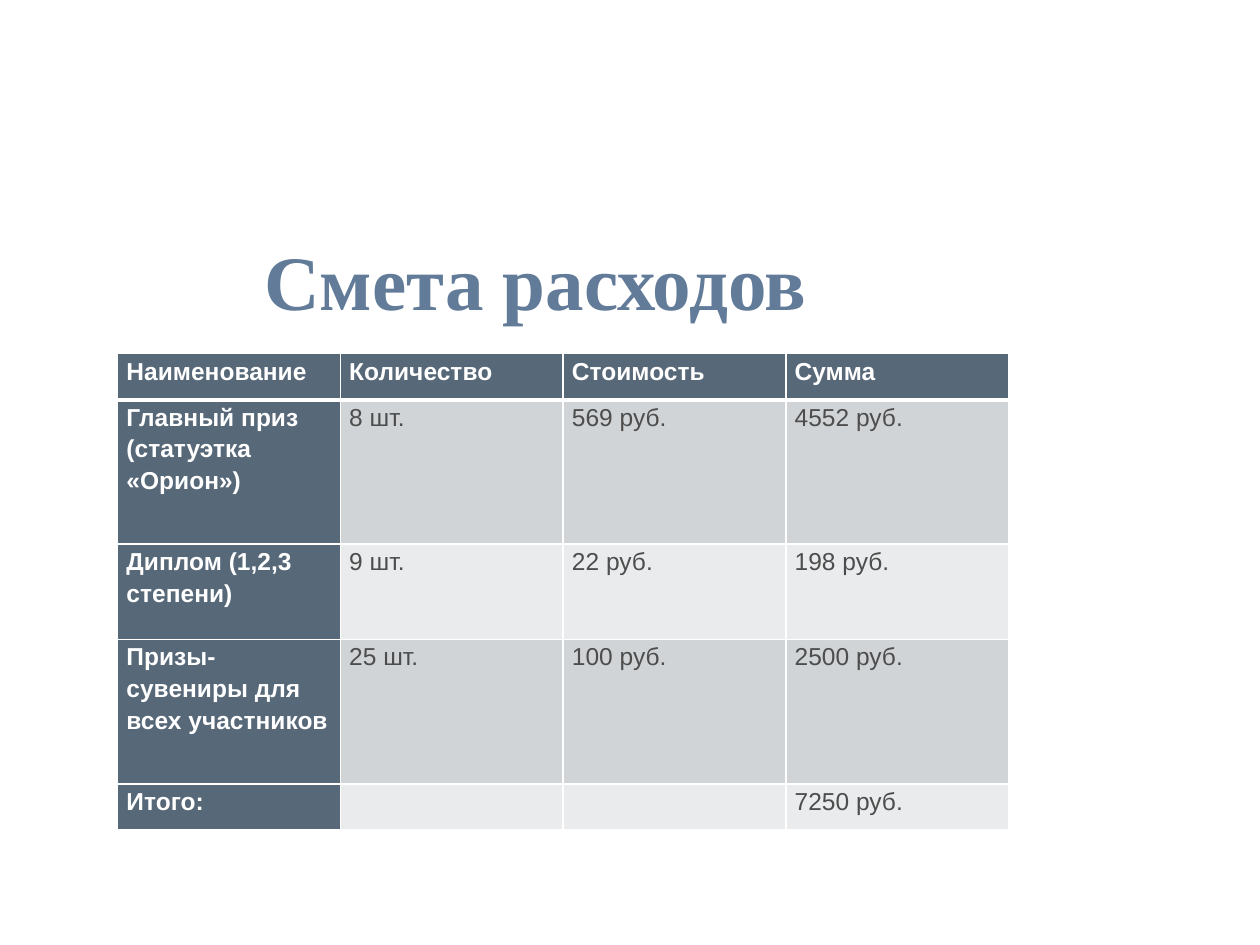
from dataclasses import dataclass

from lxml import etree
from pptx import Presentation
from pptx import util as u
from pptx.dml.color import RGBColor
from pptx.enum import text
from pptx.oxml import ns


@dataclass(frozen=True)
class Theme:
    title_color: str = "617B99"
    header_fill: str = "576878"
    header_text: str = "FFFFFF"
    body_text: str = "4D4D4D"
    band_fills: tuple = ("D1D4D6", "EAEBEC")
    border: str = "FFFFFF"
    title_font: str = "Times New Roman"
    body_font: str = "Arial"
    title_size: int = 44
    body_size: int = 14


def write_text(frame, content, *, font, size, color, bold=False,
               align=text.PP_ALIGN.LEFT, spacing=1.0):
    paragraph = frame.paragraphs[0]
    paragraph.alignment = align
    paragraph.line_spacing = spacing
    paragraph.font.size = u.Pt(size)
    if not content:
        return
    run = paragraph.add_run()
    run.text = content
    run.font.name = font
    run.font.size = u.Pt(size)
    run.font.bold = bold
    run.font.color.rgb = RGBColor.from_string(color)


class SlideBuilder:
    def __init__(self, slide, theme):
        self.slide = slide
        self.theme = theme

    def title(self, content, left, top, width, height):
        shape = self.slide.shapes.add_textbox(left, top, width, height)
        frame = shape.text_frame
        frame.word_wrap = True
        frame.vertical_anchor = text.MSO_ANCHOR.MIDDLE
        write_text(frame, content, font=self.theme.title_font,
                   size=self.theme.title_size, color=self.theme.title_color,
                   bold=True, align=text.PP_ALIGN.CENTER)

    def table(self, rows, left, top, width, row_heights):
        shape = self.slide.shapes.add_table(
            len(rows), len(rows[0]), left, top, width, sum(row_heights))
        table = shape.table
        for row, height in zip(table.rows, row_heights):
            row.height = height
        for row_index, row in enumerate(rows):
            for column_index, content in enumerate(row):
                self.cell(table.cell(row_index, column_index), content,
                          row_index, column_index)

    def cell(self, cell, content, row_index, column_index):
        theme = self.theme
        heading = row_index == 0 or column_index == 0
        band = theme.band_fills[(row_index - 1) % 2]
        cell.margin_left = cell.margin_right = u.Cm(0.18)
        cell.margin_top = cell.margin_bottom = 0
        cell.fill.solid()
        cell.fill.fore_color.rgb = RGBColor.from_string(
            theme.header_fill if heading else band)
        write_text(cell.text_frame, content, font=theme.body_font,
                   size=theme.body_size, bold=heading, spacing=1.15,
                   color=theme.header_text if heading else theme.body_text)
        self.borders(cell, top=3 if row_index == 1 else 1,
                     bottom=3 if row_index == 0 else 1)

    def borders(self, cell, top, bottom):
        properties = cell._tc.get_or_add_tcPr()
        widths = {"a:lnL": 1, "a:lnR": 1, "a:lnT": top, "a:lnB": bottom}
        for index, (tag, width) in enumerate(widths.items()):
            line = etree.Element(ns.qn(tag), w=str(u.Pt(width)))
            fill = etree.SubElement(line, ns.qn("a:solidFill"))
            etree.SubElement(fill, ns.qn("a:srgbClr"), val=self.theme.border)
            properties.insert(index, line)


def main():
    presentation = Presentation()
    presentation.slide_width = u.Cm(25.4)
    presentation.slide_height = u.Cm(19.05)
    slide = presentation.slides.add_slide(presentation.slide_layouts[6])
    builder = SlideBuilder(slide, Theme())
    builder.title("Смета расходов", u.Cm(0.64), u.Cm(4.65), u.Cm(20.32), u.Cm(1.98))

    expenses = [
        ("Наименование", "Количество", "Стоимость", "Сумма"),
        ("Главный приз (статуэтка «Орион»)", "8 шт.", "569 руб.", "4552 руб."),
        ("Диплом (1,2,3 степени)", "9 шт.", "22 руб.", "198 руб."),
        ("Призы-сувениры для всех участников", "25 шт.", "100 руб.", "2500 руб."),
        ("Итого:", "", "", "7250 руб."),
    ]
    row_heights = [u.Cm(height) for height in (0.93, 2.91, 1.92, 2.91, 0.93)]
    builder.table(expenses, u.Cm(2.37), u.Cm(7.13), u.Cm(17.96), row_heights)
    presentation.save("out.pptx")


if __name__ == "__main__":
    main()
